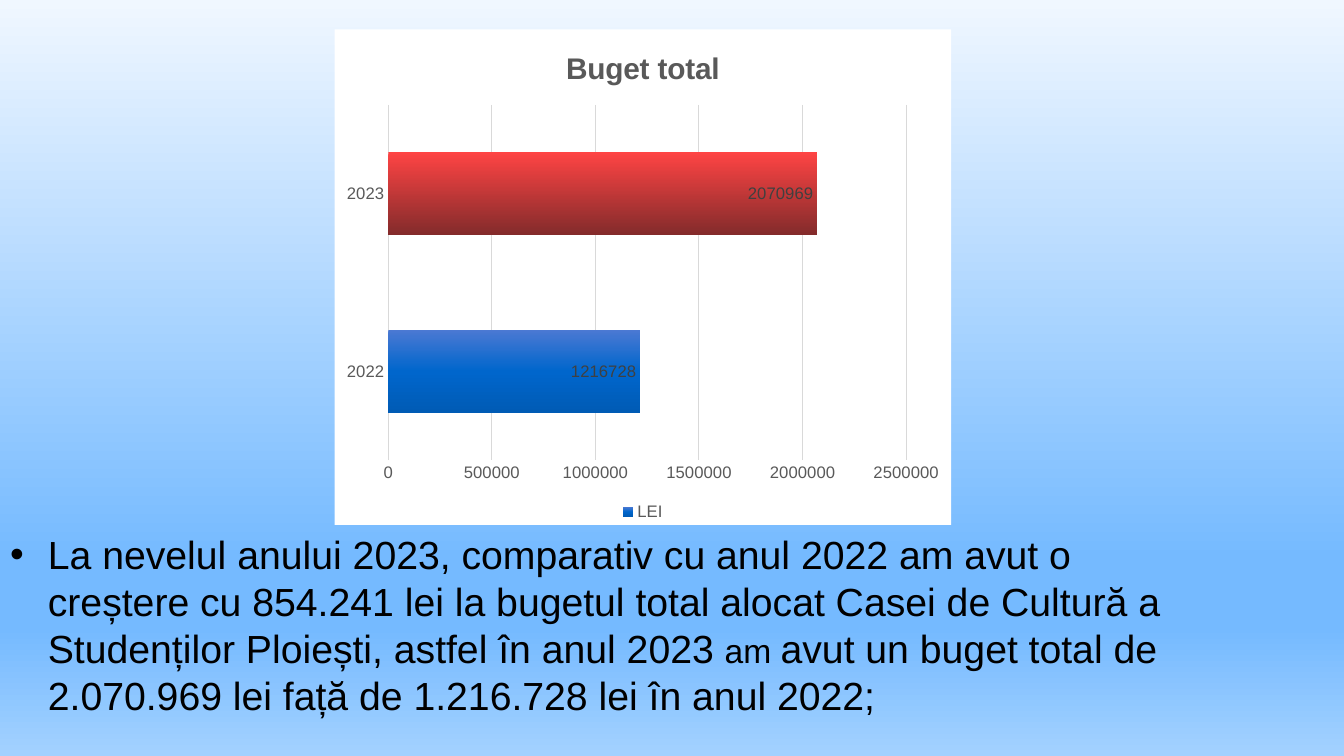
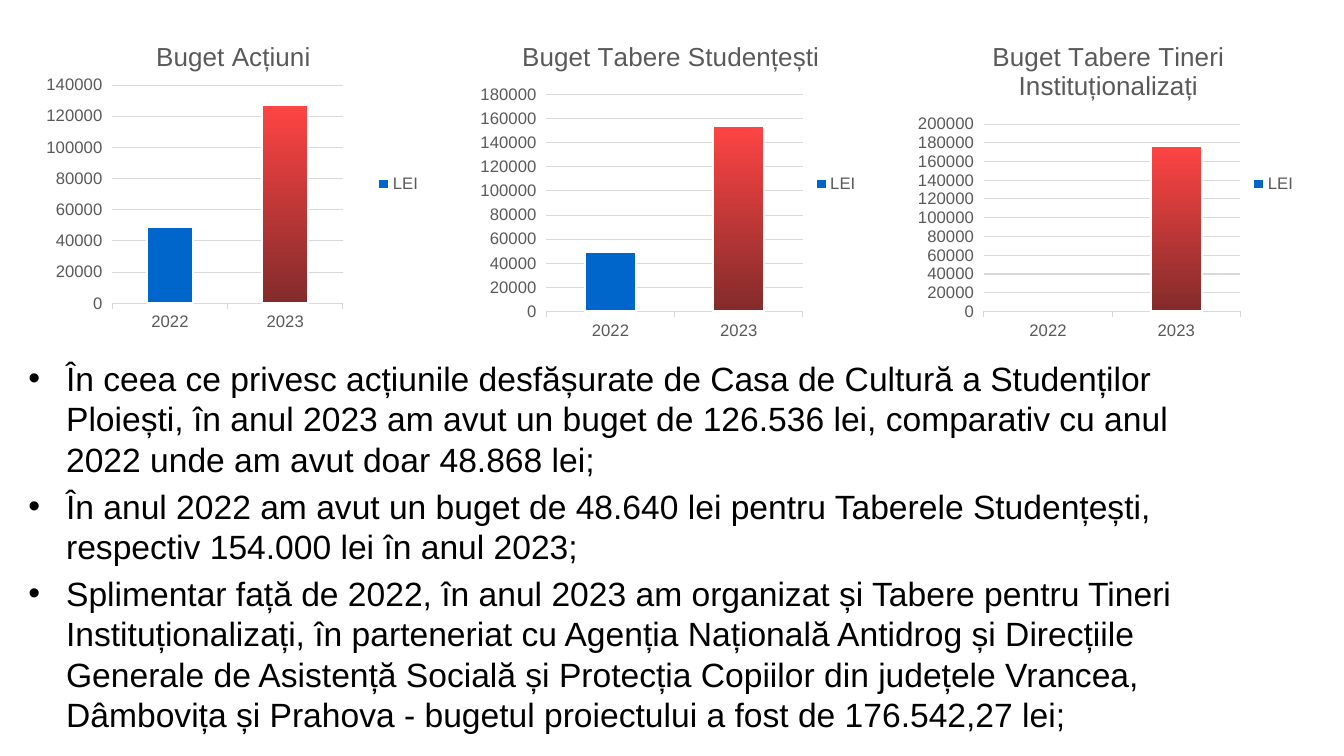
"""Build two slides comparing the 2022 and 2023 budgets."""
from dataclasses import dataclass
from typing import Optional

from lxml import etree
from pptx import Presentation
from pptx.chart import data as chart_data
from pptx.dml import color
from pptx.enum import chart as ch, text
from pptx.oxml import ns, parse_xml
from pptx.util import Pt

FONT = "Arial"
BLACK, WHITE, GREY, LABEL, RULE, BLUE = "000000", "FFFFFF", "595959", "404040", "D9D9D9", "0066CC"
SKY = [(0, "F0F7FF"), (74, "75BAFF"), (83, "75BAFF"), (100, "A3D1FF")]
BLUES = [(0, "4B79D3"), (50, BLUE), (100, "005BB5")]
REDS = [(0, "FE4444"), (100, "832B2B")]
YEARS = ["2022", "2023"]
SMALL = 11.9
NS = ns.nsdecls("c", "a")


@dataclass
class Box:
    """A rectangle in points."""

    left: float
    top: float
    width: float
    height: float

    def lengths(self) -> tuple:
        """Return the four lengths for a shape call."""
        return Pt(self.left), Pt(self.top), Pt(self.width), Pt(self.height)


@dataclass
class Run:
    """A stretch of text in one size."""

    text: str
    size: float


@dataclass
class Budget:
    """One budget chart."""

    title: str
    values: list
    top_value: int
    step: int
    plot: Optional[tuple] = None


TOTAL = Budget("Buget total", [1216728, 2070969], 2500000, 500000)
PARTS = [
    Budget("Buget Acțiuni", [49000, 127000], 140000, 20000, (0.195, 0.194, 0.581, 0.675)),
    Budget("Buget Tabere Studențești", [49000, 154000], 180000, 20000),
    Budget("Buget Tabere Tineri Instituționalizați", [None, 177000], 200000, 20000),
]
TOTAL_TEXT = [[
    Run("La nevelul anului 2023, comparativ cu anul 2022 am avut o creștere cu 854.241 lei la "
        "bugetul total alocat Casei de Cultură a Studenților Ploiești, astfel în anul 2023 ", 28),
    Run("am ", 24),
    Run("avut un buget total de 2.070.969 lei față de 1.216.728 lei în anul 2022;", 28),
]]
PARTS_TEXT = [[Run(line, 24)] for line in (
    "În ceea ce privesc acțiunile desfășurate de Casa de Cultură a Studenților Ploiești, în anul "
    "2023 am avut un buget de 126.536 lei, comparativ cu anul 2022 unde am avut doar 48.868 lei;",
    "În anul 2022 am avut un buget de 48.640 lei pentru Taberele Studențești, respectiv "
    "154.000 lei în anul 2023;",
    "Splimentar față de 2022, în anul 2023 am organizat și Tabere pentru Tineri "
    "Instituționalizați, în parteneriat cu Agenția Națională Antidrog și Direcțiile Generale de "
    "Asistență Socială și Protecția Copiilor din județele Vrancea, Dâmbovița și Prahova - "
    "bugetul proiectului a fost de 176.542,27 lei;",
)]


def rgb(value: str) -> color.RGBColor:
    """Turn a hex string into a colour."""
    return color.RGBColor.from_string(value)


def set_font(font, size: float, value: str, bold: bool = False) -> None:
    """Set face, size, colour and weight."""
    font.name, font.size, font.bold = FONT, Pt(size), bold
    font.color.rgb = rgb(value)


def set_line(line, value: str, width: float) -> None:
    """Give a line its colour and width."""
    line.color.rgb = rgb(value)
    line.width = Pt(width)


def set_solid(fill, value: str) -> None:
    """Fill with one colour."""
    fill.solid()
    fill.fore_color.rgb = rgb(value)


def set_gradient(fill, stops: list) -> None:
    """Fill from top to bottom with the given stops."""
    fill.gradient()
    fill.gradient_angle = 270
    gs_list = fill._xPr.find(ns.qn("a:gradFill")).find(ns.qn("a:gsLst"))
    for gs in list(gs_list):
        gs_list.remove(gs)
    for position, value in stops:
        gs = etree.SubElement(gs_list, ns.qn("a:gs"), pos=str(position * 1000))
        etree.SubElement(gs, ns.qn("a:srgbClr"), val=value)


def set_plot_area(chart, plot: tuple) -> None:
    """Fix the inner plot area as fractions of the chart."""
    area = chart._chartSpace.chart.plotArea
    for old in area.findall(ns.qn("c:layout")):
        area.remove(old)
    edges = "".join(f'<c:{k} val="{v}"/>' for k, v in zip("xywh", plot))
    area.insert(0, parse_xml(
        f'<c:layout {NS}><c:manualLayout><c:layoutTarget val="inner"/>'
        f'<c:xMode val="edge"/><c:yMode val="edge"/>{edges}</c:manualLayout></c:layout>'))


def add_budget_chart(s, budget: Budget, box: Box, kind, title_size: float, bold: bool = False):
    """Add a budget chart with the shared style and return it."""
    data = chart_data.CategoryChartData()
    data.categories = YEARS
    data.add_series("LEI", budget.values)
    chart = s.shapes.add_chart(kind, *box.lengths(), data).chart
    set_font(chart.font, 10, BLACK)
    chart._chartSpace.chart.addnext(parse_xml(
        f'<c:spPr {NS}><a:solidFill><a:srgbClr val="{WHITE}"/></a:solidFill>'
        '<a:ln><a:noFill/></a:ln></c:spPr>'))

    chart.has_title = True
    tf = chart.chart_title.text_frame
    tf.text = budget.title
    set_font(tf.paragraphs[0].runs[0].font, title_size, GREY, bold)

    chart.has_legend = True
    chart.legend.include_in_layout = False
    chart.legend.position = ch.XL_LEGEND_POSITION.RIGHT
    set_font(chart.legend.font, SMALL, GREY)

    years, amounts = chart.category_axis, chart.value_axis
    for axis in (years, amounts):
        set_font(axis.tick_labels.font, SMALL, GREY)
        axis.major_tick_mark = ch.XL_TICK_MARK.OUTSIDE
    set_line(years.format.line, RULE, 0.75)
    amounts.format.line.fill.background()
    amounts.minimum_scale, amounts.maximum_scale = 0, budget.top_value
    amounts.major_unit = budget.step
    amounts.has_major_gridlines = True
    set_line(amounts.major_gridlines.format.line, RULE, 0.75)

    plot = chart.plots[0]
    plot.vary_by_categories = False
    plot.gap_width = 150
    series = plot.series[0]
    series.invert_if_negative = False
    set_solid(series.format.fill, BLUE)
    set_gradient(series.points[1].format.fill, REDS)
    if budget.plot:
        set_plot_area(chart, budget.plot)
    return chart


def style_total(chart) -> None:
    """Give the total chart its wide bars, labels and bottom legend."""
    chart.legend.position = ch.XL_LEGEND_POSITION.BOTTOM
    for axis in (chart.category_axis, chart.value_axis):
        axis.major_tick_mark = ch.XL_TICK_MARK.NONE
    set_line(chart.category_axis.format.line, RULE, 1)
    plot = chart.plots[0]
    plot.gap_width, plot.overlap = 115, -20
    set_gradient(plot.series[0].format.fill, BLUES)
    plot.has_data_labels = True
    labels = plot.data_labels
    labels.show_value = True
    labels.position = ch.XL_LABEL_POSITION.INSIDE_END
    set_font(labels.font, SMALL, LABEL)


def style_part(chart) -> None:
    """Outline the columns in white."""
    series = chart.plots[0].series[0]
    for part in (series, series.points[1]):
        set_line(part.format.line, WHITE, 1.5)


def add_text_slide(prs, box: Box, paragraphs: list):
    """Add a slide whose body holds the bulleted paragraphs."""
    s = prs.slides.add_slide(prs.slide_layouts[1])
    title = s.shapes.title.element
    title.getparent().remove(title)
    sp = s.placeholders[1]
    sp.left, sp.top, sp.width, sp.height = box.lengths()
    tf = sp.text_frame
    tf.word_wrap = True
    tf.auto_size = text.MSO_AUTO_SIZE.NONE
    tf.vertical_anchor = text.MSO_ANCHOR.TOP
    for i, runs in enumerate(paragraphs):
        p = tf.add_paragraph() if i else tf.paragraphs[0]
        p.space_before = Pt(0.2 * runs[0].size if i else 0)
        for run in runs:
            r = p.add_run()
            r.text = run.text
            set_font(r.font, run.size, BLACK)
    return s


def main() -> None:
    """Build and save the presentation."""
    prs = Presentation()
    prs.slide_width, prs.slide_height = Pt(960), Pt(540)

    s = add_text_slide(prs, Box(0, 375, 864, 160), TOTAL_TEXT)
    set_gradient(s.background.fill, SKY)
    style_total(add_budget_chart(s, TOTAL, Box(239, 21, 440.5, 354),
                                 ch.XL_CHART_TYPE.BAR_CLUSTERED, 21.3, True))

    s = add_text_slide(prs, Box(13, 252, 864, 280), PARTS_TEXT)
    for i, budget in enumerate(PARTS):
        box = Box(25 + 312.5 * i, 16, 283.5, 231)
        style_part(add_budget_chart(s, budget, box, ch.XL_CHART_TYPE.COLUMN_CLUSTERED, 18.6))

    prs.save("out.pptx")


if __name__ == "__main__":
    main()
